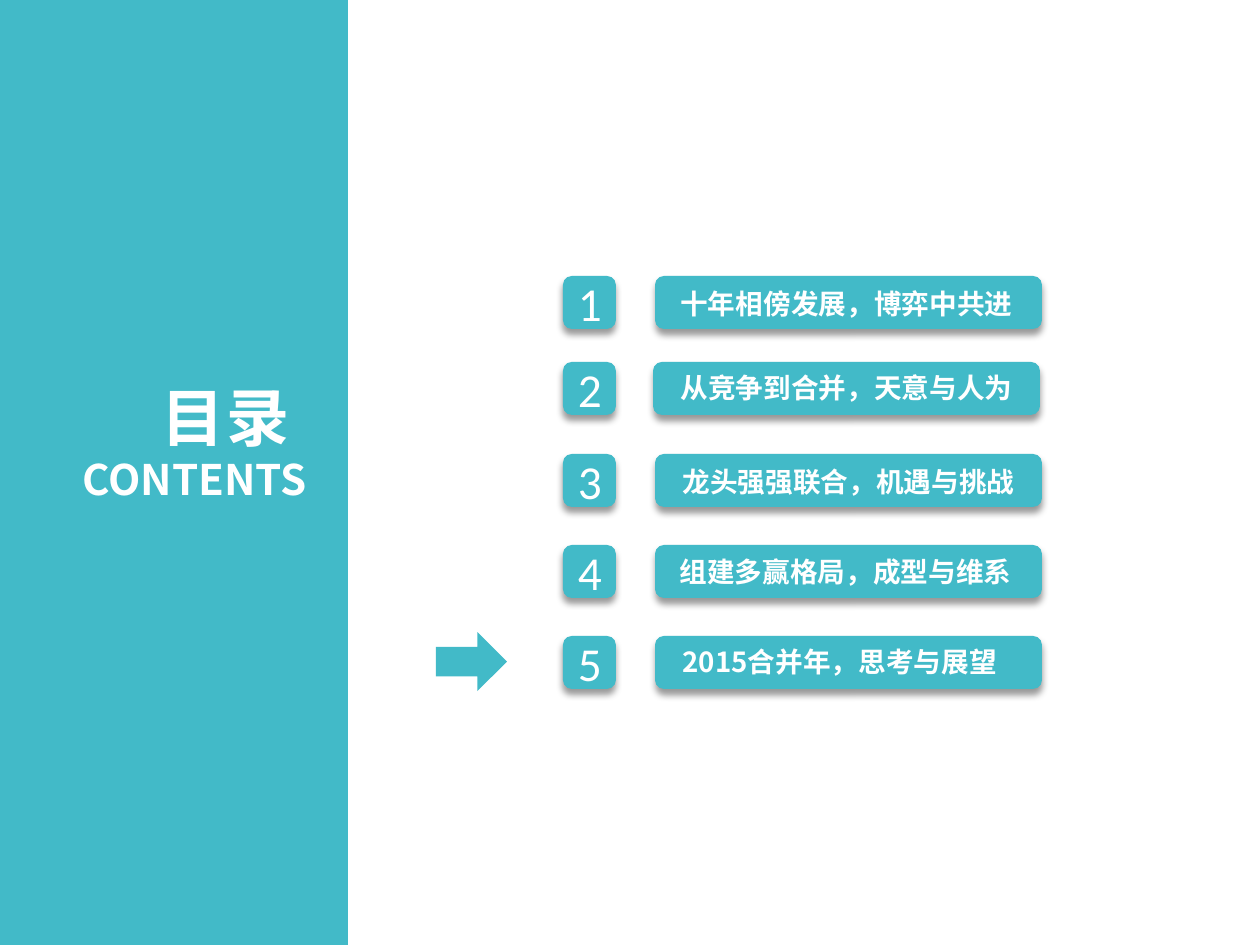
from lxml import etree
from pptx import Presentation
from pptx.dml.color import RGBColor
from pptx.enum.shapes import MSO_SHAPE
from pptx.enum.text import MSO_ANCHOR, MSO_AUTO_SIZE, PP_ALIGN
from pptx.oxml.ns import qn
from pptx.util import Pt

TEAL = RGBColor(0x42, 0xBA, 0xC8)
WHITE = RGBColor(0xFF, 0xFF, 0xFF)
RECT = MSO_SHAPE.RECTANGLE
ROUND = MSO_SHAPE.ROUNDED_RECTANGLE
ARROW = MSO_SHAPE.DOWN_ARROW
LEFT, CENTER, RIGHT = PP_ALIGN.LEFT, PP_ALIGN.CENTER, PP_ALIGN.RIGHT
MIDDLE = MSO_ANCHOR.MIDDLE
GROW = MSO_AUTO_SIZE.SHAPE_TO_FIT_TEXT
HAN = "Noto Sans CJK SC"
LATIN = "Calibri"
SCALE = 914400 / 126
SIDE = 53


def px(*nums):
    return [round(num * SCALE) for num in nums]


class Deck:
    def __init__(self, wide, high):
        self.file = Presentation()
        self.file.slide_width, self.file.slide_height = px(wide, high)
        self.slide = self.file.slides.add_slide(self.file.slide_layouts[6])
        self.shapes = self.slide.shapes

    def block(self, kind, box, home=None):
        shape = (home or self.shapes).add_shape(kind, *px(*box))
        shape.fill.solid()
        shape.fill.fore_color.rgb = TEAL
        shape.line.fill.background()
        shape.shadow.inherit = False
        return shape

    def tile(self, box, home=None):
        shape = self.block(ROUND, box, home)
        effects = shape._element.spPr.find(qn("a:effectLst"))
        shade = etree.SubElement(
            effects, qn("a:outerShdw"), blurRad=str(Pt(4)), dist=str(Pt(3)),
            dir="5400000", algn="t", rotWithShape="0")
        color = etree.SubElement(shade, qn("a:srgbClr"), val="000000")
        etree.SubElement(color, qn("a:alpha"), val="40000")
        return shape

    def style(self, para, size, face=HAN, bold=True, align=LEFT, gap=0):
        para.alignment = align
        for run in para.runs:
            font = run.font
            font.size, font.bold, font.name = Pt(size), bold, face
            font.color.rgb = WHITE
            props = run._r.get_or_add_rPr()
            props.set("spc", str(gap))
            etree.SubElement(props, qn("a:ea"), typeface=face)

    def text(self, box, words, home=None):
        frame = (home or self.shapes).add_textbox(*px(*box)).text_frame
        frame.word_wrap = True
        frame.auto_size = GROW
        frame.text = words
        return frame.paragraphs

    def badge(self, top, label):
        frame = self.tile((563, top, SIDE, SIDE)).text_frame
        frame.vertical_anchor = MIDDLE
        frame.text = label
        self.style(frame.paragraphs[0], 27, LATIN, False, CENTER)

    def entry(self, left, top, spot, words):
        group = self.shapes.add_group_shape().shapes
        self.tile((left, top, 387, SIDE), group)
        self.style(self.text(spot, words, group)[0], 15.8)

    def title(self, box, main, sub):
        head, foot = self.text(box, f"{main}\n{sub}")
        self.style(head, 36, align=RIGHT, gap=150)
        self.style(foot, 24, align=RIGHT)


ITEMS = [
    (655, 276, (668, 281, 367, 47), "十年相傍发展，博弈中共进"),
    (653, 362, (668, 365, 360, 47), "从竞争到合并，天意与人为"),
    (655, 454, (670, 459, 384, 47), "龙头强强联合，机遇与挑战"),
    (655, 545, (667, 549, 360, 47), "组建多赢格局，成型与维系"),
    (655, 636, (670, 639, 360, 47), "2015合并年，思考与展望"),
]


def main():
    deck = Deck(1260, 945)
    deck.block(RECT, (0, 0, 348, 945))
    deck.title((29, 372, 290, 140), "目录 ", "CONTENTS")
    for count, (left, top, spot, words) in enumerate(ITEMS, 1):
        deck.badge(top, str(count))
        deck.entry(left, top, spot, words)
    deck.block(ARROW, (442, 626, 59, 71)).rotation = 270
    deck.file.save("out.pptx")


if __name__ == "__main__":
    main()
